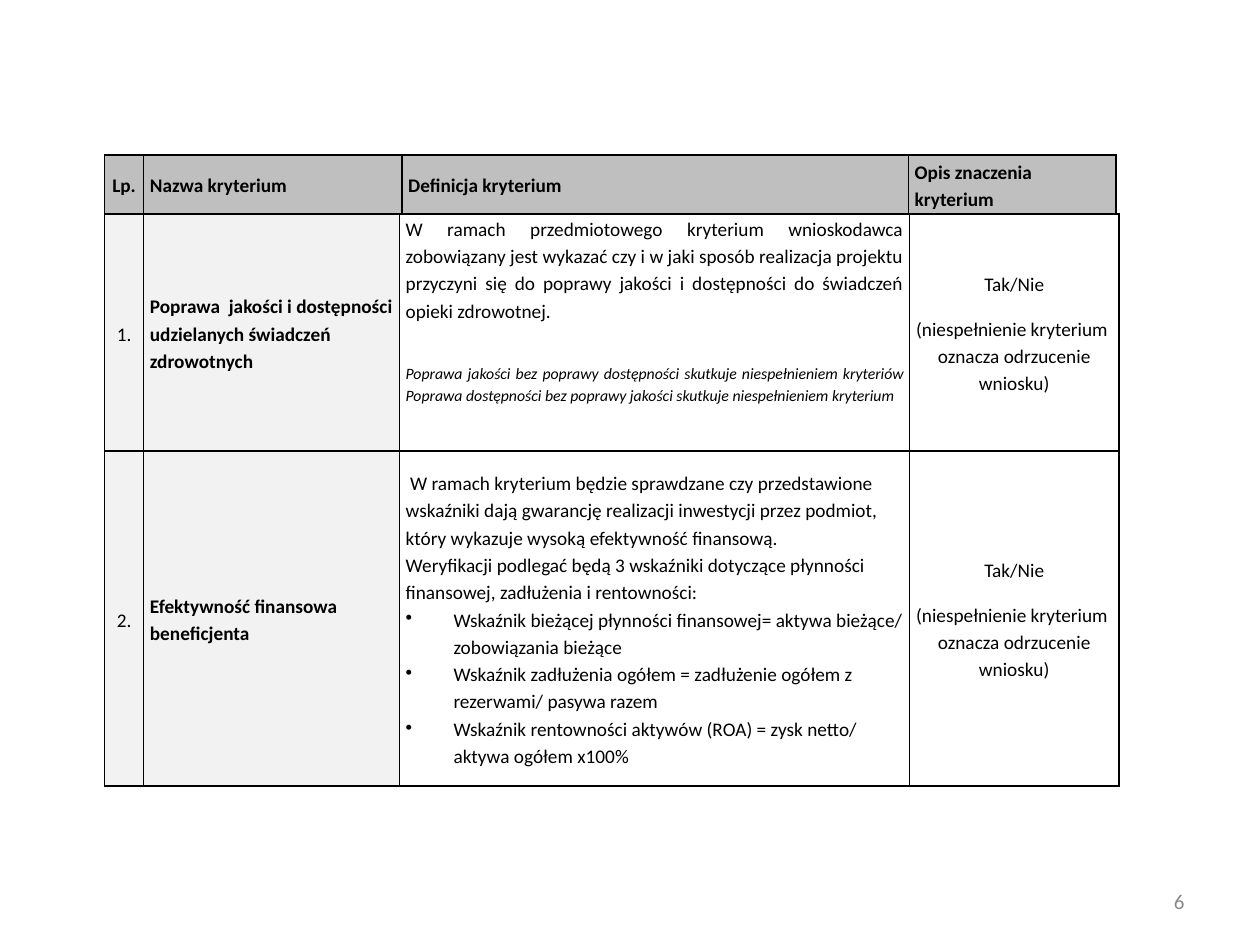
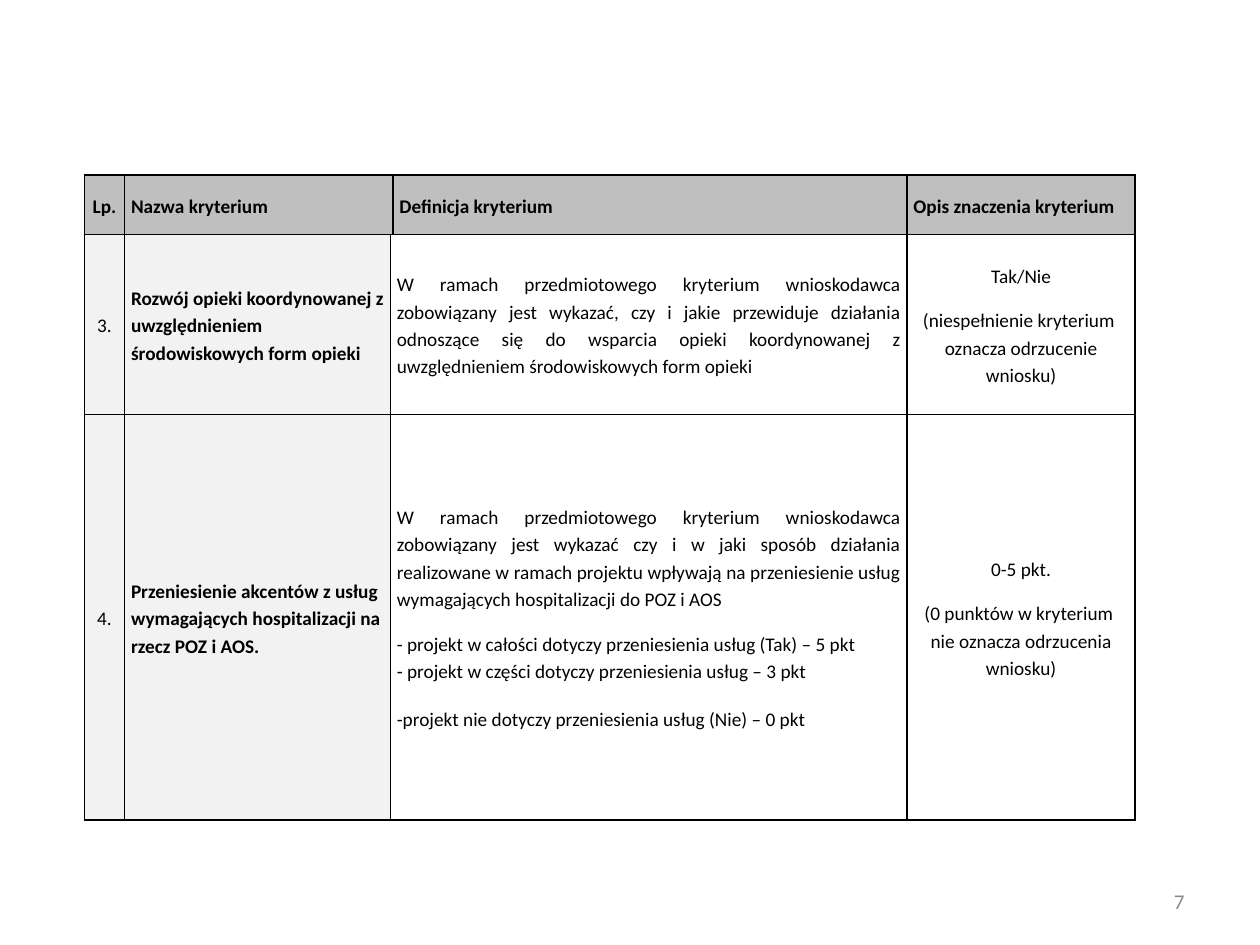
from lxml import etree
from pptx import Presentation
from pptx import util as u
from pptx.dml.color import RGBColor
from pptx.enum import text
from pptx.oxml import ns

BLACK = RGBColor(0x00, 0x00, 0x00)
WHITE = RGBColor(0xFF, 0xFF, 0xFF)
HEADER_GREY = RGBColor(0xBF, 0xBF, 0xBF)
LABEL_GREY = RGBColor(0xF2, 0xF2, 0xF2)
NUMBER_GREY = RGBColor(0x89, 0x89, 0x89)

FONT = "Calibri"
HEADINGS = ["Lp.", "Nazwa kryterium", "Definicja kryterium", "Opis znaczenia kryterium"]
HEADER_HEIGHT = 0.47
HANGING = 0.38

LEFT = text.PP_ALIGN.LEFT
CENTER = text.PP_ALIGN.CENTER
JUSTIFY = text.PP_ALIGN.JUSTIFY
MIDDLE = text.MSO_ANCHOR.MIDDLE
TOP = text.MSO_ANCHOR.TOP

CELL_FORMAT = {
    "margin_left": u.Inches(0.05),
    "margin_right": u.Inches(0.05),
    "margin_top": 0,
    "margin_bottom": 0,
}
PARAGRAPH_FORMAT = {"line_spacing": 1.15, "space_before": u.Pt(0), "space_after": u.Pt(10)}
FONT_FORMAT = {"name": FONT, "size": u.Pt(11), "bold": False, "italic": False}

TIGHT = {"space_after": u.Pt(0)}
JUSTIFIED = {"alignment": JUSTIFY}
JUSTIFIED_TIGHT = {**JUSTIFIED, **TIGHT}
JUSTIFIED_SPACED = {**JUSTIFIED, "space_before": u.Pt(12)}
SMALL_ITALIC = {"size": u.Pt(9), "italic": True}

REJECTION = ["Tak/Nie", "(niespełnienie kryterium \voznacza odrzucenie wniosku)"]
SCORING = ["0-5 pkt.", "(0 punktów w kryterium \vnie oznacza odrzucenia wniosku)"]


def item(words, paragraph_format=None, font_format=None, bullet=False):
    return words, paragraph_format or {}, font_format or {}, bullet


def apply_format(target, values):
    for name, value in values.items():
        setattr(target, name, value)


def add_bullet(paragraph):
    properties = paragraph._p.get_or_add_pPr()
    properties.set("marL", str(u.Inches(HANGING)))
    properties.set("indent", str(-u.Inches(HANGING)))
    etree.SubElement(properties, ns.qn("a:buChar"), char="•")


def add_borders(cell):
    properties = cell._tc.get_or_add_tcPr()
    for side in ("lnL", "lnR", "lnT", "lnB"):
        line = etree.SubElement(properties, ns.qn(f"a:{side}"), w=str(u.Pt(1)))
        fill = etree.SubElement(line, ns.qn("a:solidFill"))
        etree.SubElement(fill, ns.qn("a:srgbClr"), val=str(BLACK))


def write_paragraphs(frame, items):
    for index, (words, paragraph_format, font_format, bullet) in enumerate(items):
        paragraph = frame.add_paragraph() if index else frame.paragraphs[0]
        paragraph.text = words
        if bullet:
            add_bullet(paragraph)
        apply_format(paragraph, {**PARAGRAPH_FORMAT, **paragraph_format})
        for run in paragraph.runs:
            apply_format(run.font, {**FONT_FORMAT, **font_format})
            run.font.color.rgb = BLACK


def fill_cell(cell, items, color, anchor=MIDDLE):
    apply_format(cell, {**CELL_FORMAT, "vertical_anchor": anchor})
    add_borders(cell)
    cell.fill.solid()
    cell.fill.fore_color.rgb = color
    write_paragraphs(cell.text_frame, items)


def add_grid(slide, left, top, widths, heights):
    frame = slide.shapes.add_table(
        len(heights), len(widths), u.Inches(left), u.Inches(top),
        u.Inches(sum(widths)), u.Inches(sum(heights)))
    table = frame.table
    apply_format(table, {"first_row": False, "horz_banding": False})
    for column, width in zip(table.columns, widths):
        column.width = u.Inches(width)
    for row, height in zip(table.rows, heights):
        row.height = u.Inches(height)
    return table


def add_header(slide, left, top, widths):
    table = add_grid(slide, left, top, widths, [HEADER_HEIGHT])
    for index, heading in enumerate(HEADINGS):
        alignment = LEFT if index else CENTER
        heading_item = item(heading, {"alignment": alignment}, {"bold": True})
        fill_cell(table.cell(0, index), [heading_item], HEADER_GREY)


def add_criteria(slide, left, top, widths, heights, criteria):
    table = add_grid(slide, left, top, widths, heights)
    for row, (number, name, definition, meaning, anchor) in enumerate(criteria):
        centered = {"alignment": CENTER}
        fill_cell(table.cell(row, 0), [item(number, centered)], LABEL_GREY)
        fill_cell(table.cell(row, 1), [item(name, None, {"bold": True})], LABEL_GREY)
        fill_cell(table.cell(row, 2), definition, WHITE, anchor)
        fill_cell(table.cell(row, 3), [item(words, centered) for words in meaning], WHITE)


def add_slide_number(slide, number):
    shape = slide.shapes.add_textbox(
        u.Inches(7.17), u.Inches(6.95), u.Inches(2.33), u.Inches(0.4))
    apply_format(shape.text_frame, {"word_wrap": True, "vertical_anchor": MIDDLE})
    paragraph = shape.text_frame.paragraphs[0]
    paragraph.alignment = text.PP_ALIGN.RIGHT
    run = paragraph.add_run()
    run.text = str(number)
    apply_format(run.font, {"name": FONT, "size": u.Pt(12)})
    run.font.color.rgb = NUMBER_GREY


def add_criteria_slide(presentation, number, left, top, header_widths, widths, heights, criteria):
    slide = presentation.slides.add_slide(presentation.slide_layouts[6])
    add_slide_number(slide, number)
    add_criteria(slide, left, top + HEADER_HEIGHT, widths, heights, criteria)
    add_header(slide, left, top, header_widths)


QUALITY_AND_FINANCE = [
    ("1.", "Poprawa  jakości i dostępności udzielanych świadczeń zdrowotnych", [
        item("W ramach przedmiotowego kryterium wnioskodawca zobowiązany jest wykazać czy i w "
             "jaki sposób realizacja projektu przyczyni się do poprawy jakości i dostępności do "
             "świadczeń opieki zdrowotnej.", JUSTIFIED),
        item("Poprawa jakości bez poprawy dostępności skutkuje niespełnieniem kryteriów "
             "Poprawa dostępności bez poprawy jakości skutkuje niespełnieniem kryterium",
             JUSTIFIED_SPACED, SMALL_ITALIC),
    ], REJECTION, TOP),
    ("2.", "Efektywność finansowa beneficjenta", [
        item(" W ramach kryterium będzie sprawdzane czy przedstawione wskaźniki dają gwarancję "
             "realizacji inwestycji przez podmiot, który wykazuje wysoką efektywność finansową.",
             TIGHT),
        item("Weryfikacji podlegać będą 3 wskaźniki dotyczące płynności finansowej, zadłużenia "
             "i rentowności:", TIGHT),
        item("Wskaźnik bieżącej płynności finansowej= aktywa bieżące/ zobowiązania bieżące",
             TIGHT, bullet=True),
        item("Wskaźnik zadłużenia ogółem = zadłużenie ogółem z rezerwami/ pasywa razem",
             TIGHT, bullet=True),
        item("Wskaźnik rentowności aktywów (ROA) = zysk netto/ aktywa ogółem x100%",
             TIGHT, bullet=True),
    ], REJECTION, MIDDLE),
]

CARE_AND_SERVICES = [
    ("3.", "Rozwój opieki koordynowanej z uwzględnieniem środowiskowych form opieki", [
        item("W ramach przedmiotowego kryterium wnioskodawca zobowiązany jest wykazać, czy i "
             "jakie przewiduje działania odnoszące się do wsparcia opieki koordynowanej z "
             "uwzględnieniem środowiskowych form opieki", JUSTIFIED),
    ], REJECTION, MIDDLE),
    ("4.", "Przeniesienie akcentów z usług wymagających hospitalizacji na rzecz POZ i AOS.", [
        item("W ramach przedmiotowego kryterium wnioskodawca zobowiązany jest wykazać czy i w "
             "jaki sposób działania realizowane w ramach projektu wpływają na przeniesienie "
             "usług wymagających hospitalizacji do POZ i AOS", JUSTIFIED),
        item("- projekt w całości dotyczy przeniesienia usług (Tak) – 5 pkt", JUSTIFIED_TIGHT),
        item("- projekt w części dotyczy przeniesienia usług – 3 pkt", JUSTIFIED_TIGHT),
        item("-projekt nie dotyczy przeniesienia usług (Nie) – 0 pkt", JUSTIFIED_SPACED),
    ], SCORING, MIDDLE),
]


def main():
    presentation = Presentation()
    presentation.slide_width = u.Inches(10)
    presentation.slide_height = u.Inches(7.5)
    add_criteria_slide(
        presentation, 6, 0.83, 1.23, [0.31, 2.05, 4.02, 1.65],
        [0.31, 2.03, 4.05, 1.66], [1.88, 2.66], QUALITY_AND_FINANCE)
    add_criteria_slide(
        presentation, 7, 0.67, 1.39, [0.32, 2.13, 4.08, 1.81],
        [0.32, 2.11, 4.1, 1.81], [1.43, 3.22], CARE_AND_SERVICES)
    presentation.save("out.pptx")


if __name__ == "__main__":
    main()
